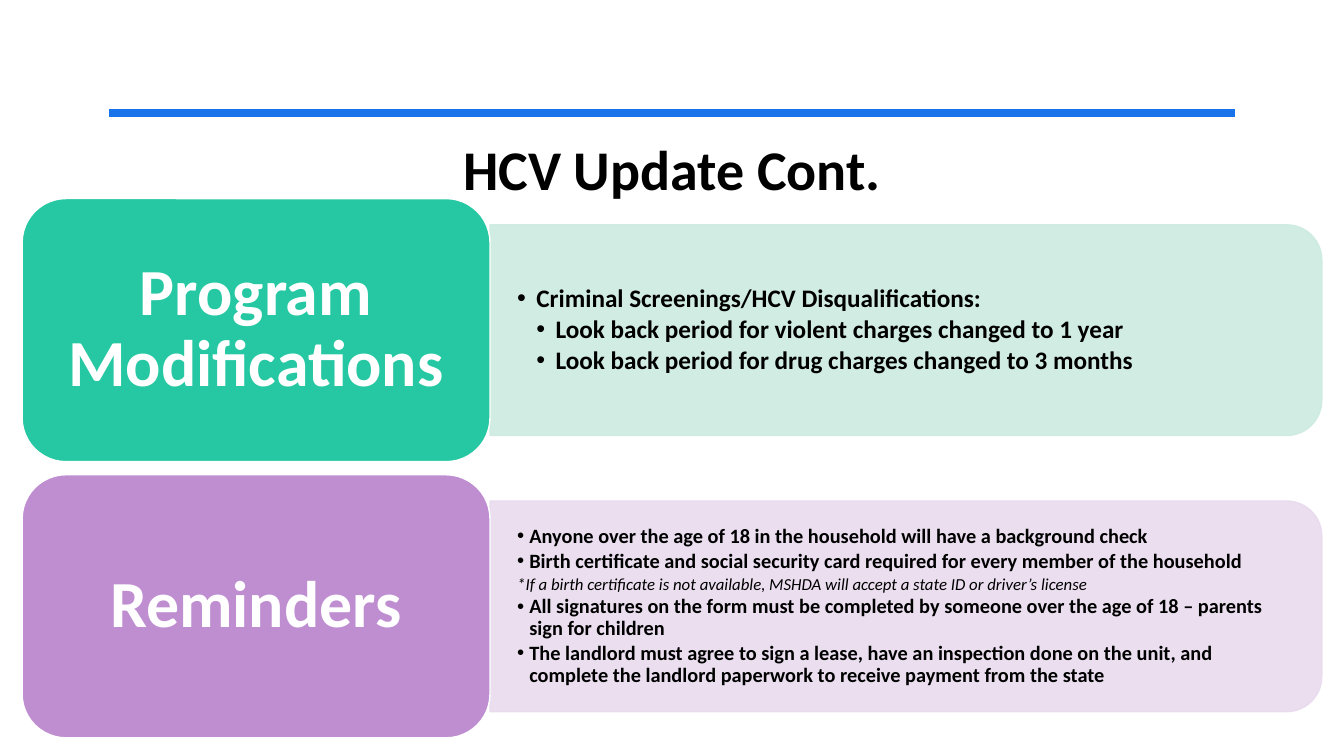
from lxml import etree
from pptx import Presentation
from pptx.dml.color import RGBColor
from pptx.enum.shapes import MSO_CONNECTOR, MSO_SHAPE
from pptx.enum.text import MSO_ANCHOR, PP_ALIGN
from pptx.oxml.ns import qn
from pptx.util import Inches, Pt

BLACK = RGBColor(0x00, 0x00, 0x00)
WHITE = RGBColor(0xFF, 0xFF, 0xFF)
BLUE = RGBColor(0x19, 0x73, 0xEB)
GREEN = RGBColor(0x25, 0xC8, 0xA2)
PALE_GREEN = RGBColor(0xCD, 0xEB, 0xE0)
PURPLE = RGBColor(0xBF, 0x8E, 0xD1)
PALE_PURPLE = RGBColor(0xE8, 0xDB, 0xEE)

TITLE = "HCV Update Cont."
ROWS = [
    ("Program Modifications", GREEN, PALE_GREEN, 18, 0.19, [
        (1, "Criminal Screenings/HCV Disqualifications:"),
        (2, "Look back period for violent charges changed to 1 year"),
        (2, "Look back period for drug charges changed to 3 months"),
    ]),
    ("Reminders", PURPLE, PALE_PURPLE, 14.5, 0.12, [
        (1, "Anyone over the age of 18 in the household will have a background check"),
        (1, "Birth certificate and social security card required for every member of the household"),
        (0, "*If a birth certificate is not available, MSHDA will accept a state ID or driver’s license"),
        (1, "All signatures on the form must be completed by someone over the age of 18 – parents sign for children"),
        (1, "The landlord must agree to sign a lease, have an inspection done on the unit, "
            "and complete the landlord paperwork to receive payment from the state"),
    ]),
]
NOTE_SIZE = 12
LEFT, TOP, PITCH = 0.22, 1.97, 2.74
CARD_W, CARD_H = 4.64, 2.61
PANEL_W, PANEL_H = 8.25, 2.09
TEXT_W, TEXT_H = 8.15, 1.88


def style(p, size, color, bold=True, italic=False):
    for r in p.runs:
        f = r.font
        f.name, f.size, f.bold, f.italic = "Calibri", Pt(size), bold, italic
        f.color.rgb = color


def set_insets(tf, x, y):
    tf.word_wrap = True
    tf.vertical_anchor = MSO_ANCHOR.MIDDLE
    tf.margin_left = tf.margin_right = Inches(x)
    tf.margin_top = tf.margin_bottom = Inches(y)


def add_box(s, kind, x, y, w, h, fill, line):
    sp = s.shapes.add_shape(kind, Inches(x), Inches(y), Inches(w), Inches(h))
    sp.shadow.inherit = False
    sp.fill.solid()
    sp.fill.fore_color.rgb = fill
    sp.line.color.rgb = line
    sp.line.width = Pt(1)
    return sp


def add_panel(s, x, middle, color):
    sp = add_box(s, MSO_SHAPE.ROUND_2_SAME_RECTANGLE, x + (PANEL_W - PANEL_H) / 2,
                 middle - PANEL_W / 2, PANEL_H, PANEL_W, color, color)
    sp.rotation = 90
    for clr in sp.element.spPr.iter(qn("a:srgbClr")):
        etree.SubElement(clr, qn("a:alpha"), val="90000")


def add_items(s, x, middle, size, indent, items):
    box = s.shapes.add_textbox(Inches(x), Inches(middle - TEXT_H / 2), Inches(TEXT_W), Inches(TEXT_H))
    tf = box.text_frame
    set_insets(tf, 0.27, 0.14)
    for i, (level, text) in enumerate(items):
        p = tf.paragraphs[0] if i == 0 else tf.add_paragraph()
        p.text = text
        p.level = max(level, 1)
        note = level == 0
        points = NOTE_SIZE if note else size
        style(p, points, BLACK, not note, note)
        p.line_spacing = 0.9
        p.space_after = Pt(points * 0.15)
        pPr = p._p.get_or_add_pPr()
        pPr.set("marL", str(Inches(indent * p.level)))
        pPr.set("indent", str(-Inches(indent)))
        if note:
            etree.SubElement(pPr, qn("a:buNone"))
        else:
            etree.SubElement(pPr, qn("a:buFont"), typeface="Arial")
            etree.SubElement(pPr, qn("a:buChar"), char="•")


def add_card(s, top, label, color):
    sp = add_box(s, MSO_SHAPE.ROUNDED_RECTANGLE, LEFT, top, CARD_W, CARD_H, color, WHITE)
    set_insets(sp.text_frame, 0.2, 0.1)
    p = sp.text_frame.paragraphs[0]
    p.text = label
    p.alignment = PP_ALIGN.CENTER
    p.line_spacing = 0.9
    style(p, 47, WHITE)


def main():
    prs = Presentation()
    prs.slide_width, prs.slide_height = Inches(13.33), Inches(7.5)
    s = prs.slides.add_slide(prs.slide_layouts[5])

    title = s.shapes.title
    title.left, title.top = Inches(1), Inches(1.28)
    title.width, title.height = Inches(11.33), Inches(1.25)
    title.text_frame.text = TITLE
    title.text_frame.vertical_anchor = MSO_ANCHOR.TOP
    p = title.text_frame.paragraphs[0]
    p.alignment = PP_ALIGN.CENTER
    style(p, 40, BLACK)

    rule = s.shapes.add_connector(MSO_CONNECTOR.STRAIGHT, Inches(1.08), Inches(1.12), Inches(12.25), Inches(1.12))
    rule.line.color.rgb = BLUE
    rule.line.width = Pt(6)
    etree.SubElement(rule.element.spPr, qn("a:effectLst"))

    panel_x = LEFT + CARD_W
    for i, (label, color, pale, size, indent, items) in enumerate(ROWS):
        top = TOP + i * PITCH
        middle = top + CARD_H / 2
        add_panel(s, panel_x, middle, pale)
        add_items(s, panel_x, middle, size, indent, items)
        add_card(s, top, label, color)

    prs.save("out.pptx")


if __name__ == "__main__":
    main()
